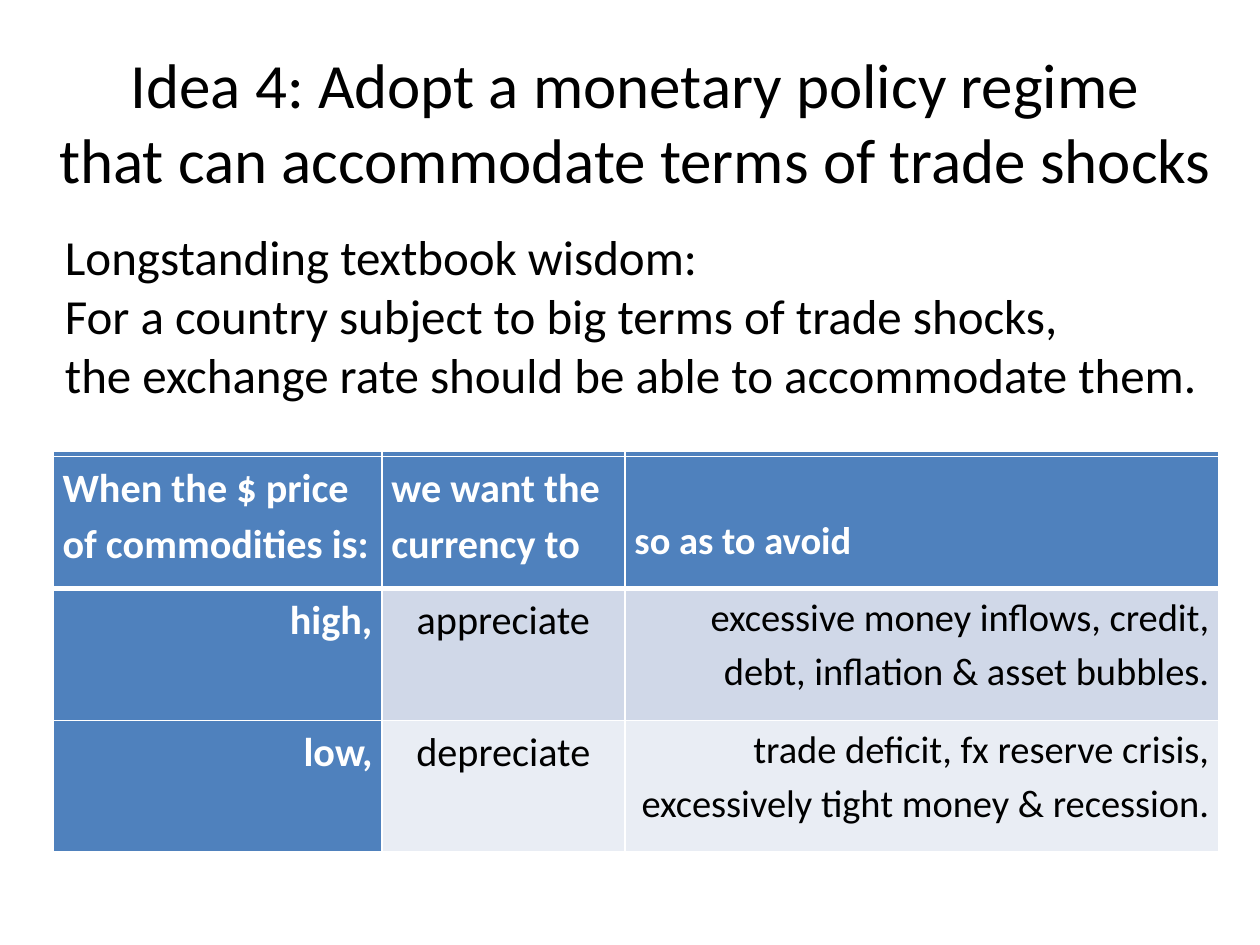
from lxml import etree
from pptx import Presentation
from pptx.dml.color import RGBColor
from pptx.enum.text import MSO_ANCHOR, PP_ALIGN
from pptx.util import Cm, Pt

LEFT, MID, RIGHT = PP_ALIGN.LEFT, PP_ALIGN.CENTER, PP_ALIGN.RIGHT
TOP, CENTER = MSO_ANCHOR.TOP, MSO_ANCHOR.MIDDLE
BLUE, WHITE, BLACK = "4F81BD", "FFFFFF", "000000"
BANDS = [BLUE, "D0D8E8", "E9EDF4"]
NS = "http://schemas.openxmlformats.org/drawingml/2006/main"


def color(code):
    return RGBColor.from_string(code)


def write(frame, text, size, hue=BLACK, bold=False, align=LEFT, space=1.0):
    frame.word_wrap = True
    par = frame.paragraphs[0]
    par.text = text
    par.alignment = align
    par.line_spacing = space
    for run in par.runs:
        font = run.font
        font.name, font.size, font.bold = "Calibri", Pt(size), bold
        font.color.rgb = color(hue)


prs = Presentation()
prs.slide_width, prs.slide_height = Cm(25.4), Cm(19.05)
slide = prs.slides.add_slide(prs.slide_layouts[6])
shapes = slide.shapes

# Title and lead text
title = shapes.add_textbox(Cm(0.84), Cm(0.85), Cm(23.93), Cm(3.17)).text_frame
title.vertical_anchor = CENTER
write(title, "Idea 4: Adopt a monetary policy regime\v"
      "that can accommodate terms of trade shocks ", 36, align=MID)
lead = shapes.add_textbox(Cm(1.06), Cm(4.45), Cm(23.93), Cm(4.24)).text_frame
lead.vertical_anchor = TOP
write(lead, "Longstanding textbook wisdom:\v"
      "For a country subject to big terms of trade shocks, \v"
      "the exchange rate should be able to accommodate them.", 28)

# Policy table, built up in three layers; the top one sits a little lower
rows = [
    ["When the $ price of commodities is:", "we want the currency to",
     "so as to avoid"],
    ["high,", "appreciate",
     "excessive money inflows, credit, debt, inflation & asset bubbles."],
    ["low,", "depreciate",
     "trade deficit, fx reserve crisis, excessively tight money & recession."],
]
sizes = [23, 23, 22]
aligns = [RIGHT, MID, RIGHT]
widths = [6.63, 4.9, 11.97]
high = 2.66
# Top edge, rows with text, columns with text, columns with fill
layers = [
    (9.1, [0, 1], [0, 1], [0, 1, 2]),
    (9.1, [0, 1], [2], [2]),
    (9.2, [0, 1, 2], [0, 1, 2], [0, 1, 2]),
]
for top, said, worded, filled in layers:
    table = shapes.add_table(3, 3, Cm(1.07), Cm(top), Cm(sum(widths)),
                             Cm(3 * high)).table
    for col, wide in enumerate(widths):
        table.columns[col].width = Cm(wide)
    for row, texts in enumerate(rows):
        table.rows[row].height = Cm(high)
        for col, text in enumerate(texts):
            cell = table.cell(row, col)
            head = row == 0 or col == 0
            cell.margin_left = cell.margin_right = Cm(0.19)
            # The last heading sits on the second line of its row
            cell.margin_top = Cm(1.09 if (row, col) == (0, 2) else 0)
            cell.margin_bottom = 0
            cell.vertical_anchor = TOP
            if row in said and col in worded:
                write(cell.text_frame, text, sizes[col],
                      WHITE if head else BLACK, head,
                      aligns[col] if row else LEFT, 1.15)
            props = cell._tc.get_or_add_tcPr()
            for side in "LRTB":
                thick = (row, side) in [(0, "B"), (1, "T")]
                line = etree.SubElement(props, f"{{{NS}}}ln{side}",
                                        w=str(Pt(3 if thick else 1)))
                fill = etree.SubElement(line, f"{{{NS}}}solidFill")
                etree.SubElement(fill, f"{{{NS}}}srgbClr", val=WHITE)
            if col in filled:
                cell.fill.solid()
                cell.fill.fore_color.rgb = color(BLUE if head else BANDS[row])
            else:
                cell.fill.background()

prs.save("out.pptx")
